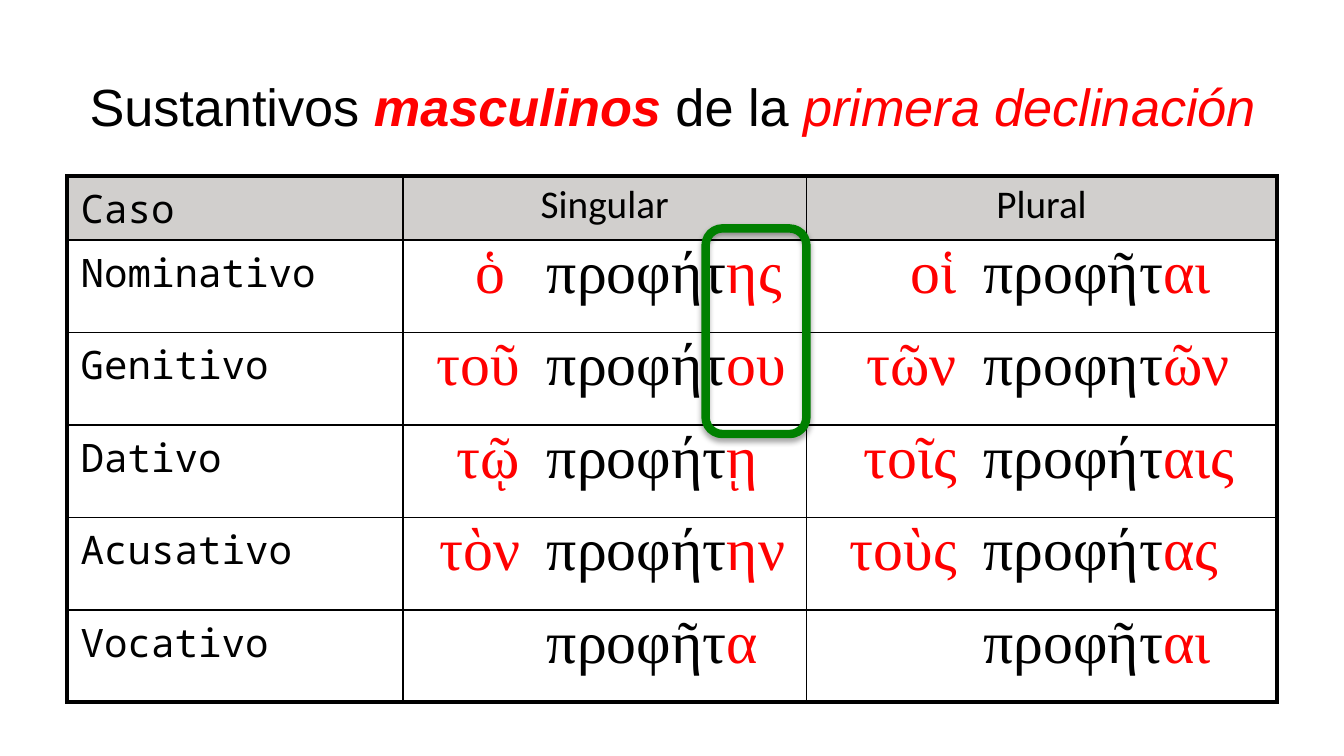
from lxml import etree
from pptx import Presentation
from pptx.dml.color import RGBColor
from pptx.enum.shapes import MSO_SHAPE
from pptx.enum.text import PP_ALIGN
from pptx.oxml import parse_xml
from pptx.oxml.ns import nsdecls, qn
from pptx.util import Inches, Pt

THEME = {
    "ink": "000000", "accent": "FF0000", "header": "D1CFCD", "frame": "008000",
    "title": ("Arial", 28), "case": ("Noto Sans Mono", 21),
    "number": ("Calibri", 21), "greek": ("Times New Roman", 32),
    "thin": 1, "thick": 2.25, "frame_line": 4.5,
}
NO_GRID = "{2D5ABB26-0587-4C30-8999-92F81FD0307C}"

TITLE = [  # text, colour, bold, italic
    ("Sustantivos ", "ink", False, False),
    ("masculinos ", "accent", True, True),
    ("de la ", "ink", False, False),
    ("primera declinación", "accent", False, True),
]
HEADERS = ["Caso", "Singular", "Plural"]
DECLENSION = [  # case, then article, stem and ending for singular and plural
    ("Nominativo", ("ὁ ", "προφήτ", "ης"), ("οἱ", "προφῆτ", "αι")),
    ("Genitivo", ("τοῦ", "προφήτ", "ου"), ("τῶν", "προφητ", "ῶν")),
    ("Dativo", ("τῷ", "προφήτ", "ῃ"), ("τοῖς", "προφήτ", "αις")),
    ("Acusativo", ("τὸν", "προφήτ", "ην"), ("τοὺς", "προφήτ", "ας")),
    ("Vocativo", ("", "προφῆτ", "α"), ("", "προφῆτ", "αι")),
]
COL_WIDTHS = [2.5, 0.92, 2.08, 1.17, 2.33]
TABLE_HEIGHT, HEADER_HEIGHT = 3.9, 0.46
ROW_HEIGHT = (TABLE_HEIGHT - HEADER_HEIGHT) / len(DECLENSION)


def rgb(name):
    return RGBColor.from_string(THEME[name])


def add_run(p, text, style, color="ink", bold=False, italic=False):
    r = p.add_run()
    r.text = text
    r.font.name, size = THEME[style]
    r.font.size = Pt(size)
    r.font.color.rgb = rgb(color)
    r.font.bold, r.font.italic = bold, italic


def set_margins(cell, side, top):
    cell.margin_left = cell.margin_right = Inches(side)
    cell.margin_top = cell.margin_bottom = Inches(top)


def set_borders(cell, widths):
    """Draw the left, right, top and bottom borders; a width of 0 hides one."""
    tc_pr = cell._tc.get_or_add_tcPr()
    for side, width in zip("LRTB", widths):
        ln = etree.SubElement(tc_pr, qn(f"a:ln{side}"), w=str(Pt(width)))
        if width:
            fill = etree.SubElement(ln, qn("a:solidFill"))
            etree.SubElement(fill, qn("a:srgbClr"), val=THEME["ink"])
        else:
            etree.SubElement(ln, qn("a:noFill"))


def fill_greek(cell, runs, align):
    set_margins(cell, 0.05, 0)
    p = cell.text_frame.paragraphs[0]
    p.alignment = align
    p._p.get_or_add_pPr().set("indent", str(Inches(0.1)))
    for text, color in runs:
        if text:
            add_run(p, text, "greek", color)


def add_title(slide):
    tb = slide.shapes.add_textbox(Inches(0.42), Inches(0.5), Inches(9.17), Inches(0.57))
    tf = tb.text_frame
    tf.word_wrap = True
    p = tf.paragraphs[0]
    p.alignment = PP_ALIGN.CENTER
    for text, color, bold, italic in TITLE:
        add_run(p, text, "title", color, bold, italic)


def add_declension_table(slide):
    n_rows, n_cols = len(DECLENSION) + 1, len(COL_WIDTHS)
    table = slide.shapes.add_table(n_rows, n_cols, Inches(0.5), Inches(1.31),
                                   Inches(sum(COL_WIDTHS)), Inches(TABLE_HEIGHT)).table
    table._tbl.tblPr.find(qn("a:tableStyleId")).text = NO_GRID
    table.first_row = table.horz_banding = False
    for col, width in zip(table.columns, COL_WIDTHS):
        col.width = Inches(width)
    for i, row in enumerate(table.rows):
        row.height = Inches(ROW_HEIGHT if i else HEADER_HEIGHT)
    for j in (1, 3):
        table.cell(0, j).merge(table.cell(0, j + 1))

    thin, thick = THEME["thin"], THEME["thick"]
    for i in range(n_rows):
        for j in range(n_cols):
            cell = table.cell(i, j)
            last_col = j + (cell.span_width if cell.is_merge_origin else 1) - 1
            is_article, is_noun = last_col in (1, 3), j in (2, 4)
            set_borders(cell, (
                thick if j == 0 else 0 if is_noun else thin,
                thick if last_col == n_cols - 1 else 0 if is_article else thin,
                thick if i == 0 else thin,
                thick if i == n_rows - 1 else thin,
            ))
            if i == 0:
                cell.fill.solid()
                cell.fill.fore_color.rgb = rgb("header")
            else:
                cell.fill.background()

    for j, text in zip((0, 1, 3), HEADERS):
        cell = table.cell(0, j)
        set_margins(cell, 0.1, 0.04)
        p = cell.text_frame.paragraphs[0]
        p.alignment = PP_ALIGN.CENTER if j else PP_ALIGN.LEFT
        add_run(p, text, "number" if j else "case")

    for i, (case, *numbers) in enumerate(DECLENSION, 1):
        cell = table.cell(i, 0)
        set_margins(cell, 0.1, 0.04)
        add_run(cell.text_frame.paragraphs[0], case, "case")
        for j, (article, stem, ending) in zip((1, 3), numbers):
            fill_greek(table.cell(i, j), [(article, "accent")], PP_ALIGN.RIGHT)
            fill_greek(table.cell(i, j + 1), [(stem, "ink"), (ending, "accent")],
                       PP_ALIGN.LEFT)


def add_ending_frame(slide):
    sp = slide.shapes.add_shape(MSO_SHAPE.ROUNDED_RECTANGLE, Inches(5.25), Inches(1.7),
                                Inches(0.75), Inches(1.53))
    sp.fill.background()
    sp.line.color.rgb = rgb("frame")
    sp.line.width = Pt(THEME["frame_line"])
    sp._element.spPr.append(parse_xml(
        f'<a:effectLst {nsdecls("a")}><a:outerShdw blurRad="{Pt(3.1)}" dist="{Pt(1.8)}" '
        f'dir="5400000" rotWithShape="0"><a:srgbClr val="{THEME["ink"]}">'
        '<a:alpha val="35000"/></a:srgbClr></a:outerShdw></a:effectLst>'))


def main():
    prs = Presentation()
    prs.slide_width = Inches(10)
    prs.slide_height = prs.slide_width * 9 // 16
    slide = prs.slides.add_slide(prs.slide_layouts[6])
    add_declension_table(slide)
    add_title(slide)
    add_ending_frame(slide)
    prs.save("out.pptx")


if __name__ == "__main__":
    main()
